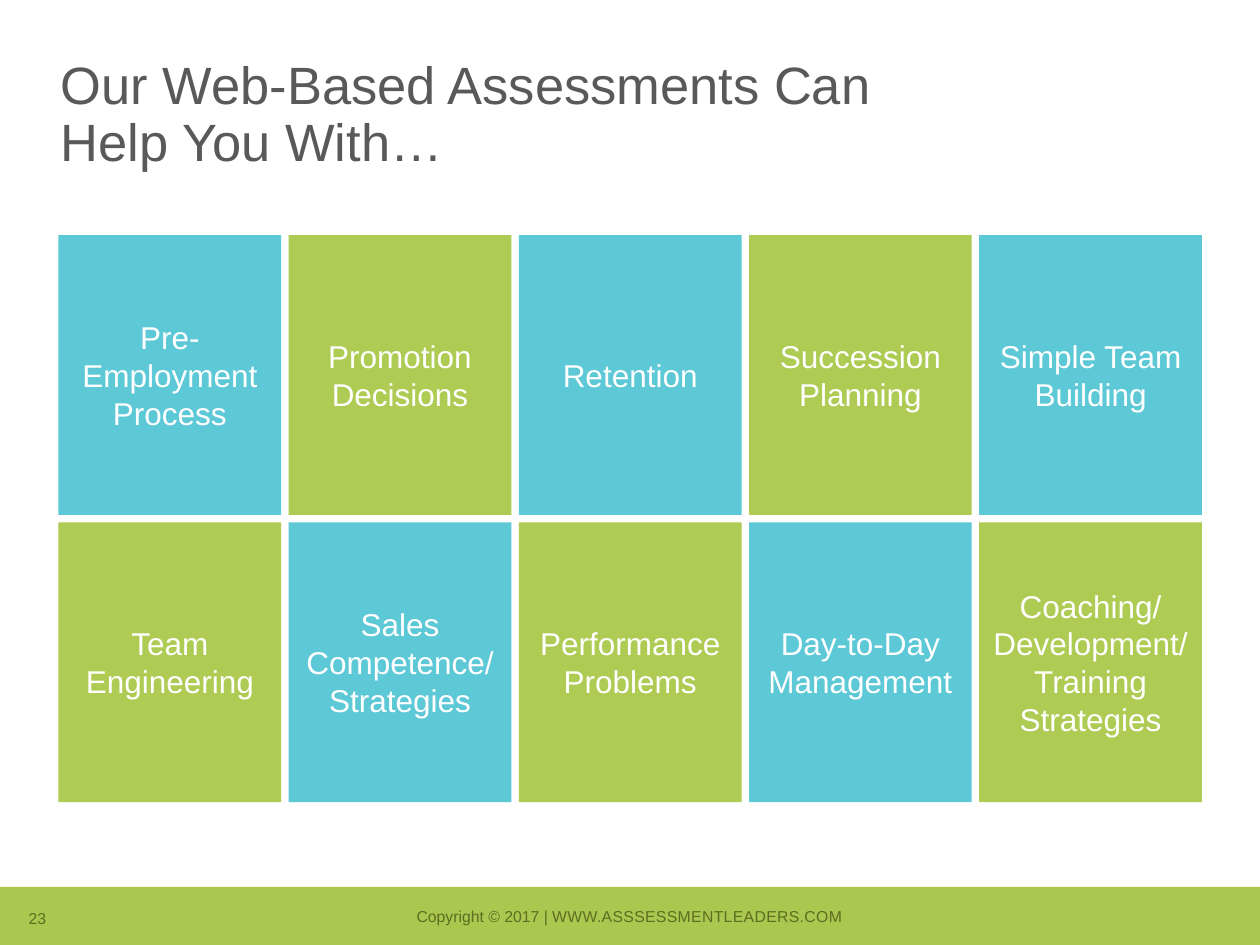
from pptx import Presentation
from pptx import util as u
from pptx.dml.color import RGBColor
from pptx.enum import shapes, text

COLORS = {
    "blue": "5DC8D6",
    "green": "AECB54",
    "footer": "AAC750",
    "footer_text": "5B6E21",
    "title": "595959",
    "white": "FFFFFF",
}
TOPICS = [
    ["Pre-Employment Process", "Promotion Decisions", "Retention",
     "Succession Planning", "Simple Team Building"],
    ["Team Engineering", "Sales Competence/Strategies", "Performance Problems",
     "Day-to-Day Management", "Coaching/\vDevelopment/Training Strategies"],
]
LEFT, TOP = 1.18, 4.74
TILE_WIDTH, TILE_HEIGHT, GAP = 4.49, 5.64, 0.15


def write(paragraph, wording, size=18, color="white", align=None,
          line_spacing=None, tracking=None):
    for index, line in enumerate(wording.split("\v")):
        if index:
            paragraph.add_line_break()
        run = paragraph.add_run()
        run.text = line
        run.font.name = "Arial"
        run.font.size = u.Pt(size)
        run.font.color.rgb = RGBColor.from_string(COLORS[color])
        if tracking:
            run.font._element.set("spc", str(tracking))
    if align is not None:
        paragraph.alignment = align
    if line_spacing:
        paragraph.line_spacing = line_spacing


class AssessmentSlide:
    def __init__(self, deck):
        self.slide = deck.slides.add_slide(deck.slide_layouts[5])

    def title(self, wording, left, top, width, height):
        heading = self.slide.shapes.title
        heading.left, heading.top = u.Cm(left), u.Cm(top)
        heading.width, heading.height = u.Cm(width), u.Cm(height)
        frame = heading.text_frame
        frame.vertical_anchor = text.MSO_ANCHOR.TOP
        frame.auto_size = text.MSO_AUTO_SIZE.NONE
        write(frame.paragraphs[0], wording, size=30, color="title",
              align=text.PP_ALIGN.LEFT, line_spacing=0.9)

    def block(self, left, top, width, height, color, wording=None):
        tile = self.slide.shapes.add_shape(
            shapes.MSO_SHAPE.RECTANGLE,
            u.Cm(left), u.Cm(top), u.Cm(width), u.Cm(height))
        tile.shadow.inherit = False
        tile.fill.solid()
        tile.fill.fore_color.rgb = RGBColor.from_string(COLORS[color])
        tile.line.fill.background()
        if wording:
            frame = tile.text_frame
            frame.word_wrap = True
            frame.vertical_anchor = text.MSO_ANCHOR.MIDDLE
            write(frame.paragraphs[0], wording, align=text.PP_ALIGN.CENTER)

    def footnote(self, left, top, width, height, parts, align):
        note = self.slide.shapes.add_textbox(
            u.Cm(left), u.Cm(top), u.Cm(width), u.Cm(height))
        frame = note.text_frame
        frame.word_wrap = False
        frame.vertical_anchor = text.MSO_ANCHOR.BOTTOM
        for wording, tracking in parts:
            write(frame.paragraphs[0], wording, size=9, color="footer_text",
                  align=align, tracking=tracking)


def main():
    deck = Presentation()
    deck.slide_width, deck.slide_height = u.Cm(25.4), u.Cm(19.05)
    page = AssessmentSlide(deck)

    page.block(0, 17.88, 25.4, 1.17, "footer")
    page.footnote(8.05, 18.14, 9.27, 0.64,
                  [("Copyright © 2017 | ", None),
                   ("WWW.ASSSESSMENTLEADERS.COM", 20)],
                  text.PP_ALIGN.CENTER)
    page.footnote(0.33, 18.19, 0.91, 0.64, [("23", None)], text.PP_ALIGN.LEFT)

    page.title("Our Web-Based Assessments Can\vHelp You With…",
               0.97, 1.07, 23.5, 2.11)

    for row, topics in enumerate(TOPICS):
        for column, topic in enumerate(topics):
            page.block(LEFT + column * (TILE_WIDTH + GAP),
                       TOP + row * (TILE_HEIGHT + GAP),
                       TILE_WIDTH, TILE_HEIGHT,
                       ("blue", "green")[(row + column) % 2], topic)

    deck.save("out.pptx")


if __name__ == "__main__":
    main()
